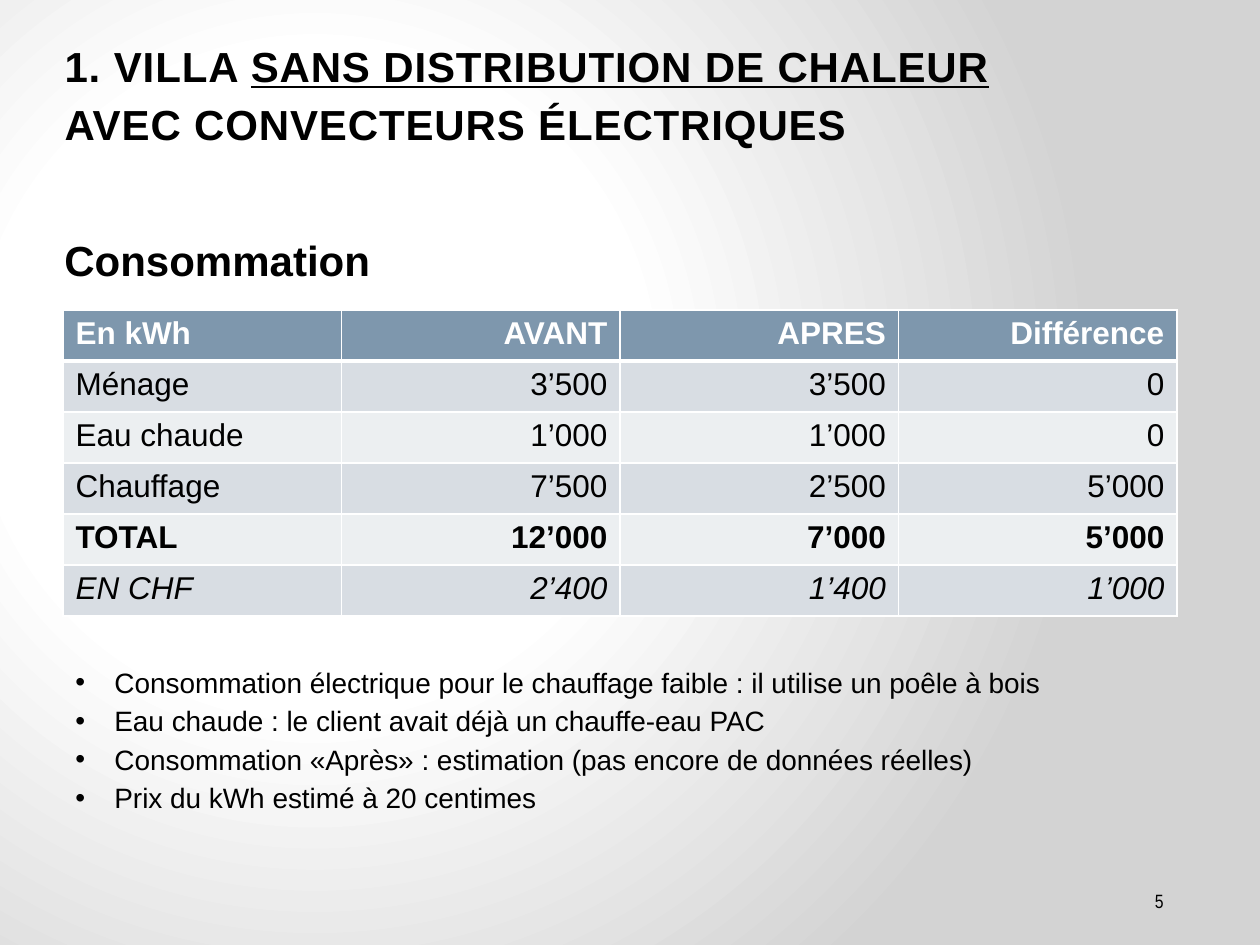
from pptx import Presentation
from pptx.dml.color import RGBColor
from pptx.enum.text import MSO_ANCHOR as Anchor, MSO_AUTO_SIZE as AutoSize, PP_ALIGN as Align
from pptx.oxml import parse_xml
from pptx.oxml.ns import nsdecls
from pptx.util import Pt

PX = 914400 / 126
BLACK, WHITE = "000000", "FFFFFF"
HEADER, BAND_DARK, BAND_LIGHT = "7E97AD", "D8DDE3", "ECEFF1"
LINE_SPACING = 1.15


def px(length):
    return round(length * PX)


def color(hex_code):
    return RGBColor.from_string(hex_code)


class SlideWriter:
    def __init__(self, slide, font="Arial"):
        self.slide = slide
        self.font = font

    def style(self, paragraph, size, ink=BLACK, bold=False, italic=False,
              align=Align.LEFT, spacing=None, font=None):
        paragraph.alignment = align
        if spacing:
            paragraph.line_spacing = spacing
        face = paragraph.font
        face.name, face.size = font or self.font, Pt(size)
        face.bold, face.italic = bold, italic
        face.color.rgb = color(ink)

    def background(self, stops, focus):
        marks = "".join(f'<a:gs pos="{pos * 1000}"><a:srgbClr val="{tint}"/></a:gs>'
                        for pos, tint in stops)
        left, top, right, bottom = (side * 1000 for side in focus)
        self.slide._element.cSld.insert(0, parse_xml(
            f'<p:bg {nsdecls("p", "a")}><p:bgPr><a:gradFill rotWithShape="1">'
            f'<a:gsLst>{marks}</a:gsLst><a:path path="circle">'
            f'<a:fillToRect l="{left}" t="{top}" r="{right}" b="{bottom}"/></a:path>'
            '</a:gradFill><a:effectLst/></p:bgPr></p:bg>'))

    def title(self, box, lead, underlined, second_line):
        heading = self.slide.shapes.title
        heading.left, heading.top, heading.width, heading.height = map(px, box)
        frame = heading.text_frame
        frame.auto_size, frame.word_wrap = AutoSize.NONE, True
        frame.vertical_anchor = Anchor.BOTTOM
        paragraph = frame.paragraphs[0]
        paragraph.add_run().text = lead
        emphasis = paragraph.add_run()
        emphasis.text, emphasis.font.underline = underlined, True
        paragraph.add_line_break()
        paragraph.add_run().text = second_line
        self.style(paragraph, 24, bold=True, spacing=LINE_SPACING)
        for run in paragraph.runs:
            run._r.get_or_add_rPr().set("spc", "50")

    def text(self, box, lines, size, bullet=None, anchor=Anchor.TOP, **style):
        frame = self.slide.shapes.add_textbox(*map(px, box)).text_frame
        frame.word_wrap, frame.vertical_anchor = True, anchor
        for index, line in enumerate(lines):
            paragraph = frame.add_paragraph() if index else frame.paragraphs[0]
            paragraph.text = line
            if bullet:
                self.bullet(paragraph, bullet)
            self.style(paragraph, size, **style)

    def bullet(self, paragraph, mark):
        paragraph.level = 1
        props = paragraph._p.get_or_add_pPr()
        props.set("marL", str(px(102)))
        props.set("indent", str(px(-39)))
        props.append(parse_xml(f'<a:buFont {nsdecls("a")} typeface="Arial"/>'))
        props.append(parse_xml(f'<a:buChar {nsdecls("a")} char="{mark}"/>'))

    def borders(self, cell, bottom):
        props = cell._tc.get_or_add_tcPr()
        widths = {"lnL": 1, "lnR": 1, "lnT": 1, "lnB": bottom}
        for position, (side, width) in enumerate(widths.items()):
            props.insert(position, parse_xml(
                f'<a:{side} {nsdecls("a")} w="{Pt(width)}"><a:solidFill>'
                f'<a:srgbClr val="{WHITE}"/></a:solidFill></a:{side}>'))

    def table(self, left, top, column_width, row_height, rows, row_styles):
        columns = len(rows[0])
        table = self.slide.shapes.add_table(
            len(rows), columns, px(left), px(top),
            px(column_width * columns), px(row_height * len(rows))).table
        for r, row in enumerate(rows):
            fill = HEADER if r == 0 else BAND_DARK if r % 2 else BAND_LIGHT
            for c, value in enumerate(row):
                cell = table.cell(r, c)
                cell.text = value
                cell.fill.solid()
                cell.fill.fore_color.rgb = color(fill)
                self.borders(cell, bottom=1 if r else 3)
                # The header's thick rule is shared with the row below
                if r == 1:
                    cell._tc.tcPr[2].set("w", str(Pt(3)))
                self.style(cell.text_frame.paragraphs[0], 18,
                           align=Align.RIGHT if c else Align.LEFT,
                           **row_styles.get(row[0], {}))


def main():
    deck = Presentation()
    deck.slide_width, deck.slide_height = px(1260), px(945)
    page = SlideWriter(deck.slides.add_slide(deck.slide_layouts[5]))

    # Background and headings
    page.background([(0, WHITE), (41, WHITE), (100, "D3D3D3")], (50, 80, 100, 100))
    page.title((52, -3, 1168, 158), "1. VILLA ", "SANS DISTRIBUTION DE CHALEUR",
               "AVEC CONVECTEURS ÉLECTRIQUES")
    page.text((52, 221, 1114, 64), ["Consommation"], 24, bold=True, spacing=LINE_SPACING)

    # Consumption before and after
    consumption = [
        ("En kWh", "AVANT", "APRES", "Différence"),
        ("Ménage", "3’500", "3’500", "0"),
        ("Eau chaude", "1’000", "1’000", "0"),
        ("Chauffage", "7’500", "2’500", "5’000"),
        ("TOTAL", "12’000", "7’000", "5’000"),
        ("EN CHF", "2’400", "1’400", "1’000"),
    ]
    page.table(63, 310, 278.5, 51, consumption, {
        "En kWh": {"ink": WHITE, "bold": True},
        "TOTAL": {"bold": True},
        "EN CHF": {"italic": True},
    })

    # Remarks
    page.text((0, 654, 1176, 159), [
        "Consommation électrique pour le chauffage faible : il utilise un poêle à bois",
        "Eau chaude : le client avait déjà un chauffe-eau PAC",
        "Consommation «Après» : estimation (pas encore de données réelles)",
        "Prix du kWh estimé à 20 centimes",
    ], 16, bullet="•", spacing=LINE_SPACING)

    # Page number
    page.text((1040, 876, 136, 50), ["5"], 11, anchor=Anchor.MIDDLE,
              align=Align.RIGHT, font="Arial Narrow")

    deck.save("out.pptx")


if __name__ == "__main__":
    main()
